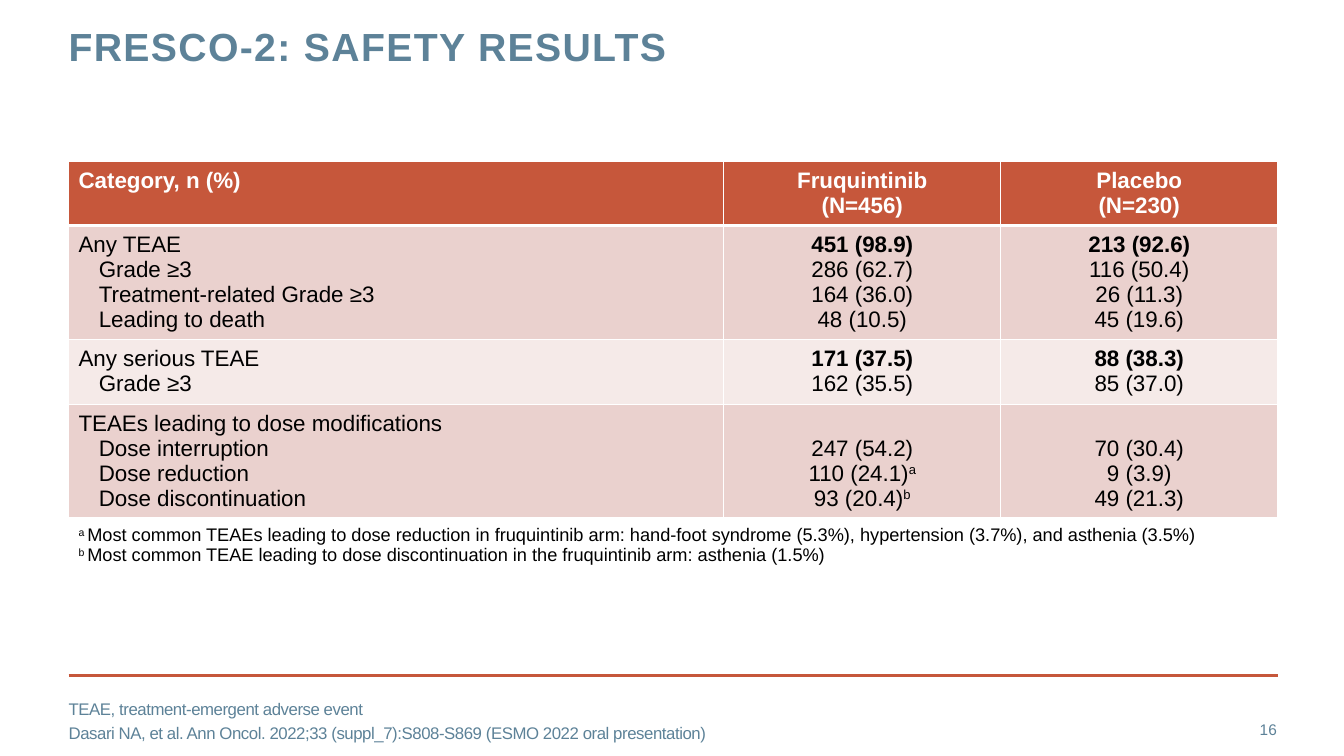
"""Build the FRESCO-2 safety results slide."""
import dataclasses
import typing

import lxml.etree
import pptx
import pptx.dml.color
import pptx.enum.shapes
import pptx.enum.text
import pptx.oxml.ns
import pptx.util

Cm = pptx.util.Cm
Pt = pptx.util.Pt
RGB = pptx.dml.color.RGBColor
ALIGN = pptx.enum.text.PP_ALIGN
ANCHOR = pptx.enum.text.MSO_ANCHOR
qn = pptx.oxml.ns.qn

RUST = RGB(0xC6, 0x57, 0x3B)
STEEL = RGB(0x5D, 0x82, 0x98)
ROSE = RGB(0xEA, 0xD1, 0xCE)
BLUSH = RGB(0xF5, 0xEA, 0xE8)
WHITE = RGB(0xFF, 0xFF, 0xFF)
BLACK = RGB(0, 0, 0)

LEFT = Cm(1.73)
WIDTHS = (Cm(16.51), Cm(6.98), Cm(6.98))
FLAT = {"margin_left": 0, "margin_right": 0, "margin_top": 0, "margin_bottom": 0,
        "word_wrap": True, "auto_size": pptx.enum.text.MSO_AUTO_SIZE.NONE}
INSET = {"margin_left": Cm(0.25), "margin_right": Cm(0.25),
         "margin_top": Cm(0.18), "margin_bottom": Cm(0.18)}


@dataclasses.dataclass
class Look:
    """Format of the text in one box or cell."""
    size: float
    color: RGB = BLACK
    bold: bool = False
    lead: bool = False
    indent: int = 0
    track: int = 0
    para: dict = dataclasses.field(default_factory=dict)
    gap: float = 0


@dataclasses.dataclass
class Row:
    """One table row with the lines of its three cells."""
    height: int
    fill: RGB
    cells: tuple
    anchor: ANCHOR = ANCHOR.TOP
    lead: bool = False


ROWS = (
    Row(Cm(1.6), RUST, (("Category, n (%)",), ("Fruquintinib", "(N=456)"),
                        ("Placebo", "(N=230)"))),
    Row(Cm(2.87), ROSE, (
        ("Any TEAE", "Grade ≥3", "Treatment-related Grade ≥3", "Leading to death"),
        ("451 (98.9)", "286 (62.7)", "164 (36.0)", "48 (10.5)"),
        ("213 (92.6)", "116 (50.4)", "26 (11.3)", "45 (19.6)")), lead=True),
    Row(Cm(1.63), BLUSH, (("Any serious TEAE", "Grade ≥3"),
                          ("171 (37.5)", "162 (35.5)"),
                          ("88 (38.3)", "85 (37.0)")), lead=True),
    Row(Cm(2.85), ROSE, (
        ("TEAEs leading to dose modifications", "Dose interruption",
         "Dose reduction", "Dose discontinuation"),
        ("247 (54.2)", "110 (24.1)^a^", "93 (20.4)^b^"),
        ("70 (30.4)", "9 (3.9)", "49 (21.3)")), ANCHOR.BOTTOM),
)
NOTES = (
    "^a ^Most common TEAEs leading to dose reduction in fruquintinib arm: hand-foot "
    "syndrome (5.3%), hypertension (3.7%), and asthenia (3.5%)",
    "^b ^Most common TEAE leading to dose discontinuation in the fruquintinib arm: "
    "asthenia (1.5%)",
)
SOURCE = (
    "TEAE, treatment-emergent adverse event",
    "Dasari NA, et al. Ann Oncol. 2022;33 (suppl_7):S808-S869 (ESMO 2022 oral presentation)",
)


def apply(target: typing.Any, values: dict) -> None:
    """Set each value as an attribute of the target."""
    for key, value in values.items():
        setattr(target, key, value)


def write(frame: typing.Any, lines: typing.Sequence[str], look: Look) -> None:
    """Write one paragraph per line; text between carets is raised."""
    for index, line in enumerate(lines):
        para = frame.add_paragraph() if index else frame.paragraphs[0]
        apply(para, look.para)
        if index:
            para.space_before = Pt(look.gap)
            if look.indent:
                para._p.get_or_add_pPr().set("indent", str(look.indent))
        bold = look.bold or (look.lead and index == 0)
        for turn, part in enumerate(line.split("^")):
            if not part:
                continue
            run = para.add_run()
            run.text = part
            apply(run.font, {"name": "Arial", "size": Pt(look.size), "bold": bold})
            run.font.color.rgb = look.color
            props = run._r.get_or_add_rPr()
            if look.track:
                props.set("spc", str(look.track))
            if turn % 2:
                props.set("baseline", "30000")


def edge(cell: typing.Any, thick: dict) -> None:
    """Draw white borders, one point wide unless told otherwise."""
    props = cell._tc.get_or_add_tcPr()
    for side in ("lnL", "lnR", "lnT", "lnB"):
        width = Pt(thick.get(side, 1))
        line = lxml.etree.SubElement(props, qn(f"a:{side}"), w=str(width))
        fill = lxml.etree.SubElement(line, qn("a:solidFill"))
        lxml.etree.SubElement(fill, qn("a:srgbClr"), val=str(WHITE))


def add_grid(slide: typing.Any) -> None:
    """Add the table of adverse events and its notes."""
    tall = [row.height for row in ROWS] + [Cm(2.08)]
    grid = slide.shapes.add_table(len(tall), len(WIDTHS), LEFT, Cm(4.07),
                                  sum(WIDTHS), sum(tall)).table
    grid.horz_banding = False
    for column, width in zip(grid.columns, WIDTHS):
        column.width = width
    for band, height in zip(grid.rows, tall):
        band.height = height
    for y, row in enumerate(ROWS):
        head = y == 0
        thick = {"lnB": 3} if head else {"lnT": 3} if y == 1 else {}
        for x, lines in enumerate(row.cells):
            cell = grid.cell(y, x)
            edge(cell, thick)
            cell.fill.solid()
            cell.fill.fore_color.rgb = row.fill
            apply(cell, {**INSET, "vertical_anchor": row.anchor})
            write(cell.text_frame, lines, Look(
                16, WHITE if head else BLACK, bold=head, lead=row.lead and x > 0,
                indent=0 if x else Cm(0.51),
                para={"alignment": ALIGN.CENTER if x else ALIGN.LEFT}))
    last = len(ROWS)
    for x in range(len(WIDTHS)):
        edge(grid.cell(last, x), {})
        grid.cell(last, x).fill.background()
    foot = grid.cell(last, 0)
    foot.merge(grid.cell(last, len(WIDTHS) - 1))
    apply(foot, INSET)
    write(foot.text_frame, NOTES, Look(13))


def add_box(slide: typing.Any, place: tuple, lines: typing.Sequence[str], look: Look) -> None:
    """Add a text box centred on its height."""
    frame = slide.shapes.add_textbox(*place).text_frame
    apply(frame, {**FLAT, "vertical_anchor": ANCHOR.MIDDLE})
    write(frame, lines, look)


def main() -> None:
    """Build and save the slide."""
    deck = pptx.Presentation()
    apply(deck, {"slide_width": Cm(33.87), "slide_height": Cm(19.05)})
    slide = deck.slides.add_slide(deck.slide_layouts[5])
    rule = slide.shapes.add_connector(pptx.enum.shapes.MSO_CONNECTOR.STRAIGHT,
                                      LEFT, Cm(17.02), LEFT + Cm(30.48), Cm(17.02))
    rule.line.color.rgb = RUST
    rule.line.width = Pt(2)
    lxml.etree.SubElement(rule._element.spPr, qn("a:effectLst"))
    title = slide.shapes.title
    apply(title, {"left": LEFT, "top": Cm(0.69), "width": Cm(24.28), "height": Cm(2.24)})
    apply(title.text_frame, {**FLAT, "vertical_anchor": ANCHOR.TOP})
    write(title.text_frame, ("FRESCO-2: SAFETY RESULTS",), Look(
        28, STEEL, bold=True, track=100,
        para={"alignment": ALIGN.LEFT, "line_spacing": Pt(30)}))
    add_grid(slide)
    add_box(slide, (LEFT, Cm(17.65), Cm(28.27), Cm(1.02)), SOURCE,
            Look(12, STEEL, track=-30, gap=3))
    add_box(slide, (Cm(30), Cm(17.86), Cm(2.18), Cm(1.02)), ("16",),
            Look(11, STEEL, para={"alignment": ALIGN.RIGHT}))
    deck.save("out.pptx")


if __name__ == "__main__":
    main()
